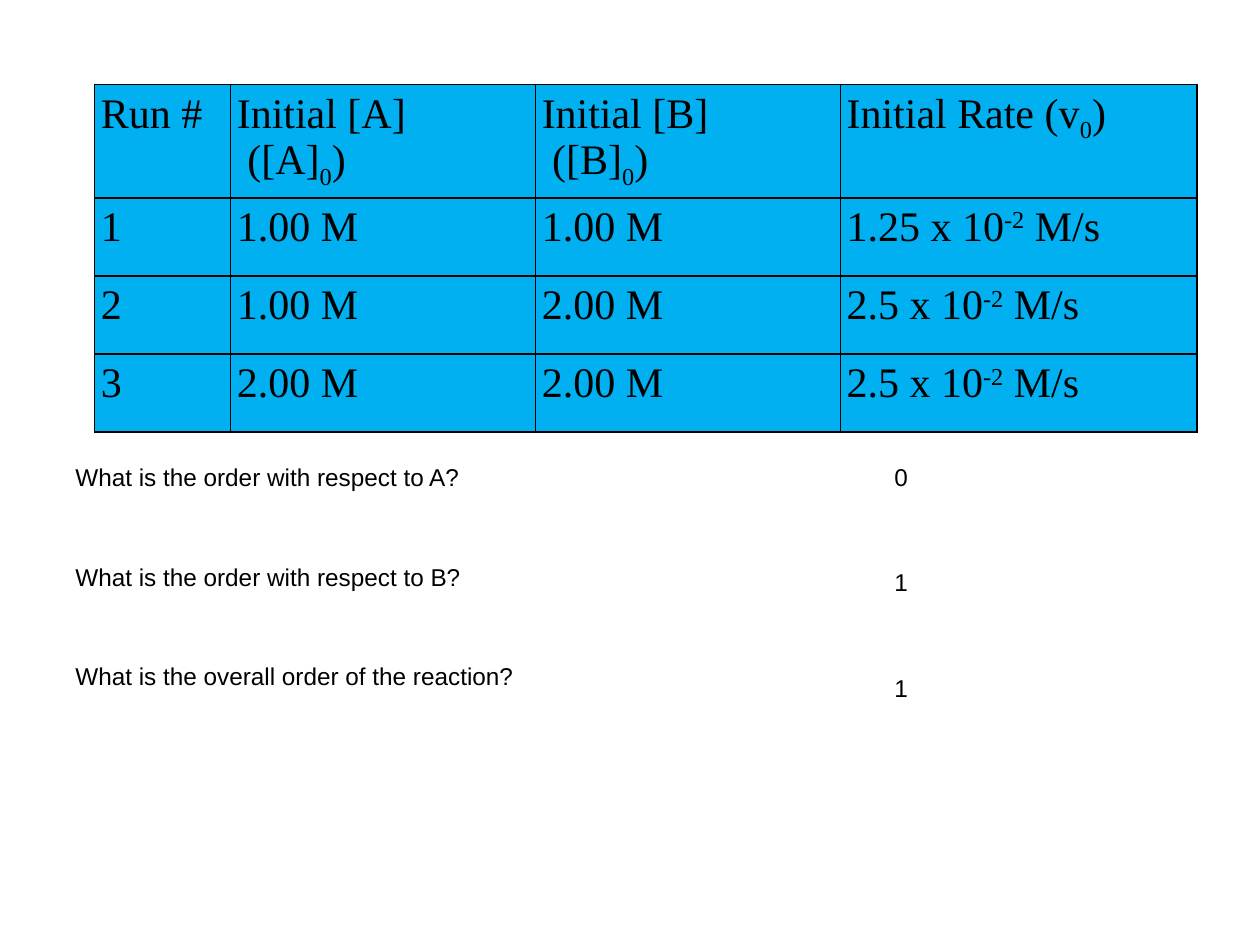
from lxml import etree
from pptx import Presentation
from pptx.dml.color import RGBColor
from pptx.enum.text import MSO_AUTO_SIZE as AutoSize
from pptx.oxml.ns import qn
from pptx.util import Inches, Pt

BLACK = RGBColor(0, 0, 0)
CELL_BLUE = RGBColor(0x00, 0xB0, 0xF0)
SUBSCRIPT, SUPERSCRIPT = -25000, 30000
COLUMN_WIDTHS = (1.08, 2.42, 2.42, 2.83)
ROW_HEIGHTS = (0.9, 0.62, 0.62, 0.62)

# A cell with three parts has its middle part shifted off the baseline
HEADINGS = (
    ("Run #",),
    ("Initial [A]\v ([A]", "0", ")"),
    ("Initial [B]\v ([B]", "0", ")"),
    ("Initial Rate (v", "0", ")"),
)
RUNS = (
    ("1", "1.00 M", "1.00 M", "1.25"),
    ("2", "1.00 M", "2.00 M", "2.5"),
    ("3", "2.00 M", "2.00 M", "2.5"),
)
QUESTIONS = (
    "What is the order with respect to A?",
    "What is the order with respect to B?",
    "What is the overall order of the reaction?",
)
ANSWERS = (("0", 0.75), ("1", 0.67), ("1", 0.42))


def format_span(span, font_name, baseline=0):
    span.font.name = font_name
    span.font.size = Pt(24)
    span.font.color.rgb = BLACK
    if baseline:
        span.font._element.set("baseline", str(baseline))


def add_borders(cell):
    properties = cell._tc.get_or_add_tcPr()
    for position, side in enumerate(("lnL", "lnR", "lnT", "lnB")):
        line = etree.Element(qn(f"a:{side}"), w=str(Pt(1)))
        fill = etree.SubElement(line, qn("a:solidFill"))
        etree.SubElement(fill, qn("a:srgbClr"), val=str(BLACK))
        properties.insert(position, line)


def fill_cell(cell, parts, shift):
    cell.margin_left = cell.margin_right = Inches(0.05)
    cell.margin_top = cell.margin_bottom = Inches(0.05)
    cell.fill.solid()
    cell.fill.fore_color.rgb = CELL_BLUE
    add_borders(cell)
    para = cell.text_frame.paragraphs[0]
    para.text = parts[0]
    for part in parts[1:]:
        para.add_run().text = part
    for span in para.runs:
        format_span(span, "Times New Roman")
    if len(parts) == 3:
        format_span(para.runs[-2], "Times New Roman", shift)


def add_rate_table(page):
    table = page.shapes.add_table(
        len(ROW_HEIGHTS), len(COLUMN_WIDTHS), Inches(0.75), Inches(0.67),
        Inches(sum(COLUMN_WIDTHS)), Inches(sum(ROW_HEIGHTS))).table
    for column, width in zip(table.columns, COLUMN_WIDTHS):
        column.width = Inches(width)
    for row, height in zip(table.rows, ROW_HEIGHTS):
        row.height = Inches(height)

    for column, parts in enumerate(HEADINGS):
        fill_cell(table.cell(0, column), parts, SUBSCRIPT)
    for row, (*values, rate) in enumerate(RUNS, 1):
        entries = [(value,) for value in values]
        entries.append((f"{rate} x 10", "-2", " M/s"))
        for column, parts in enumerate(entries):
            fill_cell(table.cell(row, column), parts, SUPERSCRIPT)


def add_text(page, text, left, top, width, height, gap=0):
    box = page.shapes.add_textbox(
        Inches(left), Inches(top), Inches(width), Inches(height))
    frame = box.text_frame
    frame.word_wrap = True
    frame.auto_size = AutoSize.SHAPE_TO_FIT_TEXT
    frame.text = text
    for index, para in enumerate(frame.paragraphs):
        para.space_before = Pt(gap if index else 0)
        for span in para.runs:
            format_span(span, "Arial", SUPERSCRIPT)


def main():
    deck = Presentation()
    deck.slide_width, deck.slide_height = Inches(10), Inches(7.5)
    page = deck.slides.add_slide(deck.slide_layouts[6])

    # Measured rates
    add_rate_table(page)

    # Questions on the left, answers on the right
    add_text(page, "\n".join(QUESTIONS), 0.5, 3.58, 5.67, 2.52, gap=28)
    for index, (answer, width) in enumerate(ANSWERS):
        add_text(page, answer, 7, 3.58 + index * 0.835, width, 0.5)

    deck.save("out.pptx")


if __name__ == "__main__":
    main()
